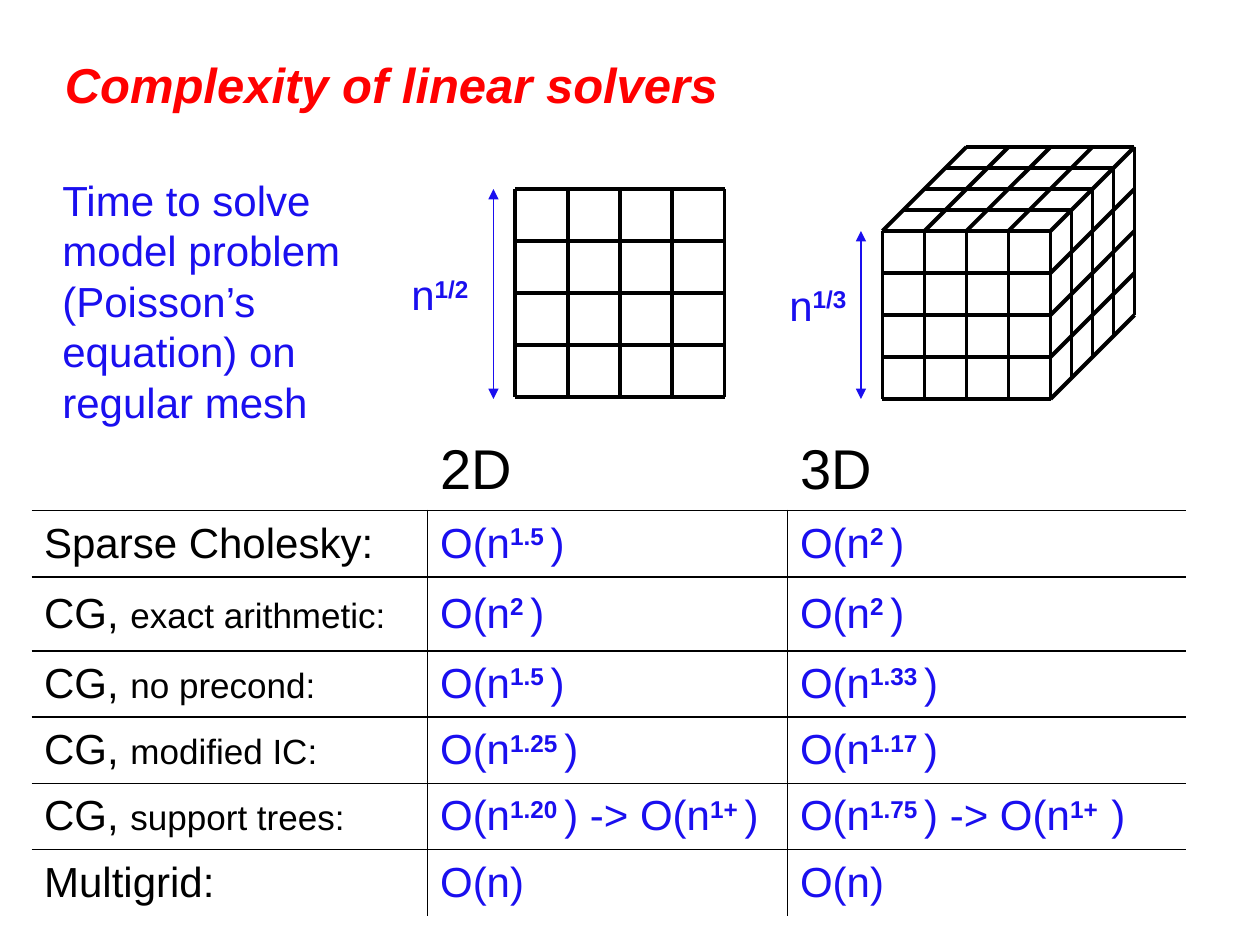
from lxml.etree import SubElement
from pptx import Presentation
from pptx.dml.color import RGBColor
from pptx.enum.shapes import MSO_CONNECTOR as CONN
from pptx.enum.text import MSO_ANCHOR as ANCHOR, MSO_AUTO_SIZE as AUTO
from pptx.oxml.ns import qn
from pptx.util import Pt

# Content: text between a pair of ^ marks is superscript
TITLE = "Complexity of linear solvers"
INTRO = "Time to solve model problem (Poisson’s equation) on regular mesh"
HEADS = ["2D", "3D"]
SOLVERS = [  # name, detail, 2D cost, 3D cost
    ("Sparse Cholesky:", "", "O(n^1.5 ^)", "O(n^2 ^)"),
    ("CG, ", "exact arithmetic:", "O(n^2 ^)", "O(n^2 ^)"),
    ("CG, ", "no precond:", "O(n^1.5 ^)", "O(n^1.33 ^)"),
    ("CG, ", "modified IC:", "O(n^1.25 ^)", "O(n^1.17 ^)"),
    ("CG, ", "support trees:", "O(n^1.20 ^) -> O(n^1+ ^)", "O(n^1.75 ^) -> O(n^1+  ^)"),
    ("Multigrid:", "", "O(n)", "O(n)"),
]
COLORS = {"title": "FF0000", "math": "1A0FEF", "ink": "000000"}
FONT = "Arial"
COL_WIDTHS = [226.3, 205.7, 228]
ROW_HEIGHTS = [45.5, 38, 42.3, 37.8, 37.9, 37.8, 38]
CELLS = 4  # mesh cells along each edge

prs = Presentation()
prs.slide_width, prs.slide_height = Pt(720), Pt(540)
s = prs.slides.add_slide(prs.slide_layouts[6])


def add_text(p, text, size, color, **style):
    for i, part in enumerate(text.split("^")):
        r = p.add_run()
        r.text = part
        f = r.font
        f.name, f.size = FONT, Pt(size)
        f.color.rgb = RGBColor.from_string(COLORS[color])
        f.bold, f.italic = style.get("bold", False), style.get("italic", False)
        if i % 2:
            f.bold = True
            r._r.get_or_add_rPr().set("baseline", "30000")


def space_before(p, percent):
    spacing = SubElement(p._p.get_or_add_pPr(), qn("a:spcBef"))
    SubElement(spacing, qn("a:spcPct")).set("val", str(percent * 1000))


def add_box(shapes, x, y, w, h, wrap=True):
    tf = shapes.add_textbox(Pt(x), Pt(y), Pt(w), Pt(h)).text_frame
    tf.word_wrap = wrap
    return tf


def add_line(shapes, x1, y1, x2, y2, color="ink", width=2.25, arrows=False):
    sp = shapes.add_connector(CONN.STRAIGHT, Pt(x1), Pt(y1), Pt(x2), Pt(y2))
    sp.line.color.rgb = RGBColor.from_string(COLORS[color])
    sp.line.width = Pt(width)
    if arrows:
        for end in ("a:headEnd", "a:tailEnd"):
            SubElement(sp.line._ln, qn(end)).set("type", "triangle")
    SubElement(sp._element.spPr, qn("a:effectLst"))


def add_grid(shapes, x, y, u, v, first_u=0, first_v=0):
    """Mesh at (x, y) with edges u and v; first_* = 1 skips a shared edge."""
    for (ax, ay), (bx, by), first in ((u, v, first_u), (v, u, first_v)):
        for i in range(first, CELLS + 1):
            x0, y0 = x + bx * i / CELLS, y + by * i / CELLS
            add_line(shapes, x0, y0, x0 + ax, y0 + ay)


def add_measure(shapes, label, label_x, label_y, x, top, bottom):
    tf = add_box(shapes, label_x, label_y, 50.4, 36, wrap=False)
    tf.auto_size = AUTO.SHAPE_TO_FIT_TEXT
    add_text(tf.paragraphs[0], label, 24, "math")
    add_line(shapes, x, bottom, x, top, "math", 1, arrows=True)


def set_borders(cell, shown):
    tcPr = cell._tc.get_or_add_tcPr()
    for side in "LRTB":
        ln = SubElement(tcPr, qn("a:ln" + side), w=str(Pt(1)))
        if side in shown:
            fill = SubElement(ln, qn("a:solidFill"))
            SubElement(fill, qn("a:srgbClr")).set("val", COLORS["ink"])
        else:
            SubElement(ln, qn("a:noFill"))


# Title
tf = add_box(s.shapes, 30, 24, 672, 48)
tf.vertical_anchor = ANCHOR.MIDDLE
add_text(tf.paragraphs[0], TITLE, 28, "title", bold=True, italic=True)

# Table of costs
rows = [[[], [(HEADS[0], 32, "ink")], [(HEADS[1], 32, "ink")]]]
for name, detail, cost_2d, cost_3d in SOLVERS:
    label = [(name, 24, "ink")] + ([(detail, 20, "ink")] if detail else [])
    rows.append([label, [(cost_2d, 24, "math")], [(cost_3d, 24, "math")]])

n_rows, n_cols = len(rows), len(COL_WIDTHS)
table = s.shapes.add_table(n_rows, n_cols, Pt(18), Pt(246),
                           Pt(sum(COL_WIDTHS)), Pt(sum(ROW_HEIGHTS))).table
table.first_row = table.horz_banding = False
for col, w in zip(table.columns, COL_WIDTHS):
    col.width = Pt(w)
for row, h in zip(table.rows, ROW_HEIGHTS):
    row.height = Pt(h)
for i, row in enumerate(rows):
    for j, parts in enumerate(row):
        cell = table.cell(i, j)
        cell.vertical_anchor = ANCHOR.MIDDLE
        p = cell.text_frame.paragraphs[0]
        if parts:
            space_before(p, 20)
        for text, size, color in parts:
            add_text(p, text, size, color)
        inner = {"T": i > 0, "B": i < n_rows - 1,
                 "L": i > 0 and j > 0, "R": i > 0 and j < n_cols - 1}
        set_borders(cell, [side for side, on in inner.items() if on])
        cell.fill.background()

# Square mesh
square = s.shapes.add_group_shape().shapes
add_grid(square, 294.5, 108, (119.5, 0), (0, 119))
add_measure(square, "n^1/2", 228, 150, 282, 108, 228)

# Cube mesh: front, top and right faces, each shared edge drawn once
cube = s.shapes.add_group_shape().shapes
X, Y, EDGE, DEPTH = 504.3, 132, 96, 48
across, down, back = (EDGE, 0), (0, EDGE), (DEPTH, -DEPTH)
add_grid(cube, X, Y, across, down)
add_grid(cube, X, Y, across, back, first_u=1)
add_grid(cube, X + EDGE, Y, down, back, first_u=1, first_v=1)
add_measure(cube, "n^1/3", 444, 156, 492, Y, Y + EDGE)

# Problem statement
tf = add_box(s.shapes, 28.6, 96.2, 174, 151)
tf.auto_size = AUTO.SHAPE_TO_FIT_TEXT
space_before(tf.paragraphs[0], 50)
add_text(tf.paragraphs[0], INTRO, 24, "math")

prs.save("out.pptx")
